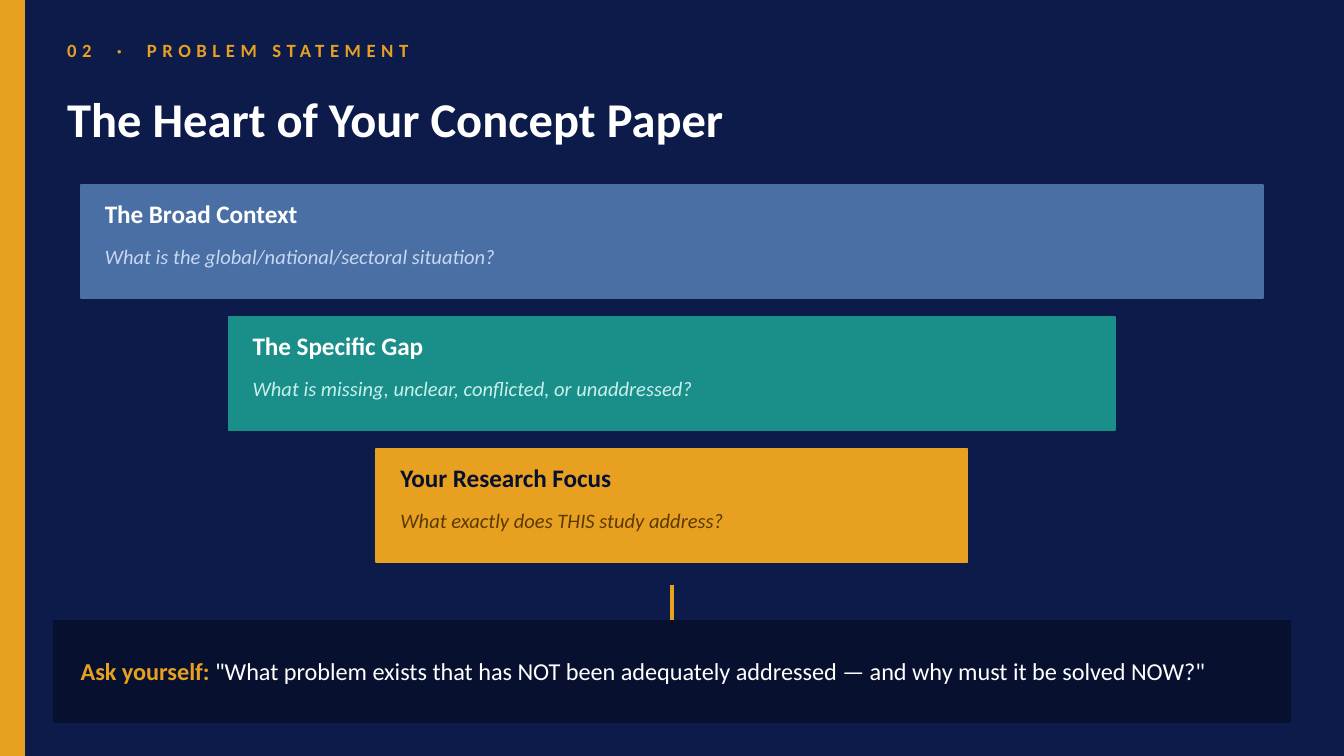
"""Build the problem statement slide with its narrowing funnel of questions."""
import pptx
import pptx.dml.color
import pptx.enum.shapes
import pptx.enum.text
import pptx.oxml
import pptx.oxml.ns
import pptx.util

Pt = pptx.util.Pt
RGBColor = pptx.dml.color.RGBColor

NAVY = RGBColor(0x0D, 0x1B, 0x4B)
DARK_NAVY = RGBColor(0x07, 0x10, 0x2E)
GOLD = RGBColor(0xE8, 0xA0, 0x20)
BLUE = RGBColor(0x4A, 0x6F, 0xA5)
TEAL = RGBColor(0x1A, 0x8F, 0x8A)
WHITE = RGBColor(0xFF, 0xFF, 0xFF)
PALE_BLUE = RGBColor(0xC8, 0xD8, 0xF0)
PALE_TEAL = RGBColor(0xC8, 0xF0, 0xEC)
BROWN = RGBColor(0x5A, 0x3A, 0x00)

SLIDE_WIDTH, SLIDE_HEIGHT = 720, 405
BAND_TOP, BAND_HEIGHT, BAND_PITCH = 99.36, 60.48, 70.56
BAND_LEFT, BAND_STEP, BAND_PADDING = 43.2, 79.2, 12.96


def add_panel(left, top, width, height, color):
    panel = slide.shapes.add_shape(
        pptx.enum.shapes.MSO_SHAPE.RECTANGLE, Pt(left), Pt(top), Pt(width), Pt(height))
    panel.shadow.inherit = False
    panel.fill.solid()
    panel.fill.fore_color.rgb = color
    panel.line.color.rgb = color
    panel.line.width = Pt(1)


def add_text(left, top, width, height, size, *parts):
    frame = slide.shapes.add_textbox(Pt(left), Pt(top), Pt(width), Pt(height)).text_frame
    frame.word_wrap = True
    frame.vertical_anchor = pptx.enum.text.MSO_ANCHOR.MIDDLE
    frame.margin_left = frame.margin_right = frame.margin_top = frame.margin_bottom = 0
    for wording, color, bold, italic in parts:
        run = frame.paragraphs[0].add_run()
        run.text = wording
        run.font.name = "Calibri"
        run.font.size = Pt(size)
        run.font.color.rgb = color
        run.font.bold = bold
        run.font.italic = italic
    return frame


presentation = pptx.Presentation()
presentation.slide_width = Pt(SLIDE_WIDTH)
presentation.slide_height = Pt(SLIDE_HEIGHT)
slide = presentation.slides.add_slide(presentation.slide_layouts[6])
slide.background.fill.solid()
slide.background.fill.fore_color.rgb = NAVY

add_panel(0, 0, 12.96, SLIDE_HEIGHT, GOLD)
section = add_text(36, 14.4, 648, 25.2, 10, ("02  ·  PROBLEM STATEMENT", GOLD, True, False))
section.paragraphs[0].runs[0]._r.get_or_add_rPr().set("spc", "300")
add_text(36, 44.64, 648, 37.44, 26, ("The Heart of Your Concept Paper", WHITE, True, False))

bands = [
    ("The Broad Context", "What is the global/national/sectoral situation?",
     BLUE, WHITE, PALE_BLUE),
    ("The Specific Gap", "What is missing, unclear, conflicted, or unaddressed?",
     TEAL, WHITE, PALE_TEAL),
    ("Your Research Focus", "What exactly does THIS study address?",
     GOLD, DARK_NAVY, BROWN),
]
for level, (heading, question, band_color, heading_color, question_color) in enumerate(bands):
    left = BAND_LEFT + level * BAND_STEP
    top = BAND_TOP + level * BAND_PITCH
    width = SLIDE_WIDTH - 2 * left
    text_left = left + BAND_PADDING
    add_panel(left, top, width, BAND_HEIGHT, band_color)
    add_text(text_left, top + 4.32, width / 2, 21.6, 13.5,
             (heading, heading_color, True, False))
    add_text(text_left, top + 27.36, width - 2 * BAND_PADDING, 21.6, 11,
             (question, question_color, False, True))

stem = slide.shapes.add_connector(
    pptx.enum.shapes.MSO_CONNECTOR.STRAIGHT,
    Pt(SLIDE_WIDTH / 2), Pt(313.2), Pt(SLIDE_WIDTH / 2), Pt(333.36))
stem.line.color.rgb = GOLD
stem.line.width = Pt(2)
stem._element.spPr.append(pptx.oxml.parse_xml(
    f"<a:effectLst {pptx.oxml.ns.nsdecls('a')}/>"))

add_panel(28.8, 332.64, 662.4, 54, DARK_NAVY)
add_text(43.2, 336.96, 633.6, 44.64, 13,
         ("Ask yourself: ", GOLD, True, False),
         ('"What problem exists that has NOT been adequately addressed — '
          'and why must it be solved NOW?"', WHITE, False, False))

presentation.save("out.pptx")
